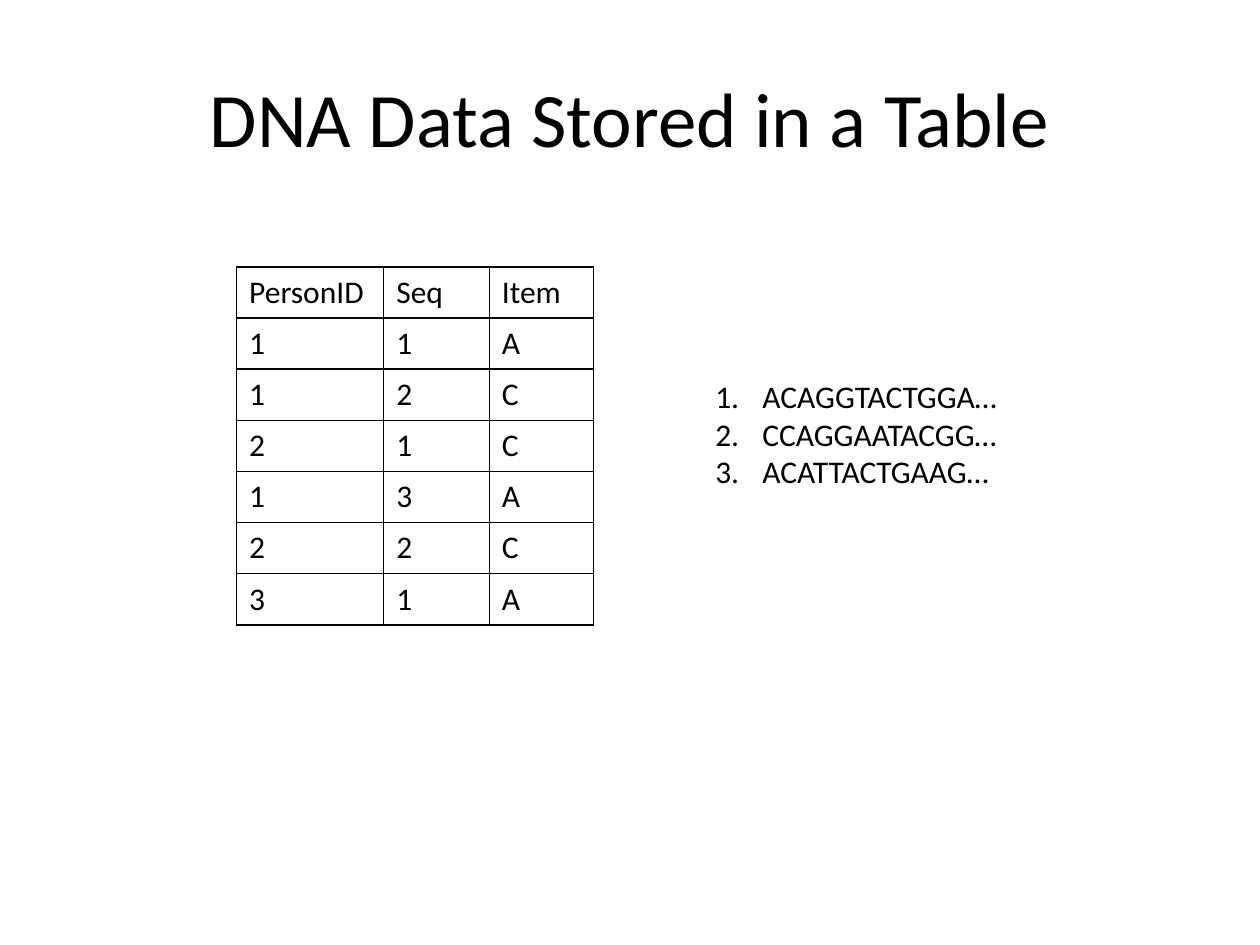
import pptx
import pptx.dml.color
import pptx.enum.text
import pptx.oxml
import pptx.oxml.ns
import pptx.util
from pptx.util import Cm

BLACK = pptx.dml.color.RGBColor(0x00, 0x00, 0x00)
WHITE = pptx.dml.color.RGBColor(0xFF, 0xFF, 0xFF)
BODY_SIZE = 18
TITLE_SIZE = 44

DNA_ROWS = [
    ("PersonID", "Seq", "Item"),
    ("1", "1", "A"),
    ("1", "2", "C"),
    ("2", "1", "C"),
    ("1", "3", "A"),
    ("2", "2", "C"),
    ("3", "1", "A"),
]
COLUMN_SHARES = (1.17, 0.84, 0.83)
SEQUENCES = ("ACAGGTACTGGA…", "CCAGGAATACGG…", "ACATTACTGAAG…")


def write(paragraph, wording, size):
    run = paragraph.add_run()
    run.text = wording
    run.font.color.rgb = BLACK
    font_format = {"name": "Calibri", "size": pptx.util.Pt(size)}
    for attribute, value in font_format.items():
        setattr(run.font, attribute, value)


def add_text_frame(slide, box, **frame_format):
    frame = slide.shapes.add_textbox(*box).text_frame
    for attribute, value in frame_format.items():
        setattr(frame, attribute, value)
    return frame


def add_title(slide, box):
    heading = add_text_frame(
        slide, box, word_wrap=True,
        vertical_anchor=pptx.enum.text.MSO_ANCHOR.MIDDLE,
    ).paragraphs[0]
    heading.alignment = pptx.enum.text.PP_ALIGN.CENTER
    write(heading, "DNA Data Stored in a Table", TITLE_SIZE)


def outline_cell(cell):
    """Draw a thin solid border on all four sides of the cell."""
    properties = cell._tc.get_or_add_tcPr()
    for position, side in enumerate(("lnL", "lnR", "lnT", "lnB")):
        border = pptx.oxml.parse_xml(
            f'<a:{side} {pptx.oxml.ns.nsdecls("a")} w="{pptx.util.Pt(1)}">'
            f'<a:solidFill><a:srgbClr val="{BLACK}"/></a:solidFill></a:{side}>'
        )
        properties.insert(position, border)


def add_dna_table(slide, box):
    left, top, width, height = box
    dna = slide.shapes.add_table(
        len(DNA_ROWS), len(COLUMN_SHARES), left, top, width, height
    ).table
    for column, share in zip(dna.columns, COLUMN_SHARES):
        column.width = round(width * share / sum(COLUMN_SHARES))
    for row, values in zip(dna.rows, DNA_ROWS):
        row.height = height // len(DNA_ROWS)
        for cell, value in zip(row.cells, values):
            cell.fill.solid()
            cell.fill.fore_color.rgb = WHITE
            outline_cell(cell)
            write(cell.text_frame.paragraphs[0], value, BODY_SIZE)


def add_sequence_list(slide, box):
    frame = add_text_frame(
        slide, box, word_wrap=False,
        auto_size=pptx.enum.text.MSO_AUTO_SIZE.SHAPE_TO_FIT_TEXT,
    )
    indent = Cm(0.95)
    for number, sequence in enumerate(SEQUENCES):
        entry = frame.add_paragraph() if number else frame.paragraphs[0]
        properties = entry._p.get_or_add_pPr()
        for attribute, value in {"marL": indent, "indent": -indent}.items():
            properties.set(attribute, str(value))
        properties.append(pptx.oxml.parse_xml(
            f'<a:buFont {pptx.oxml.ns.nsdecls("a")} typeface="+mj-lt"/>'
        ))
        properties.append(pptx.oxml.parse_xml(
            f'<a:buAutoNum {pptx.oxml.ns.nsdecls("a")} type="arabicPeriod"/>'
        ))
        write(entry, sequence, BODY_SIZE)


def main():
    deck = pptx.Presentation()
    deck.slide_width, deck.slide_height = Cm(25.4), Cm(19.05)
    slide = deck.slides.add_slide(deck.slide_layouts[6])
    add_title(slide, (Cm(1.27), Cm(0.76), Cm(22.86), Cm(3.18)))
    add_dna_table(slide, (Cm(4.77), Cm(5.38), Cm(7.2), Cm(7.22)))
    add_sequence_list(slide, (Cm(14.17), Cm(7.47), Cm(6.4), Cm(2.57)))
    deck.save("out.pptx")


if __name__ == "__main__":
    main()
